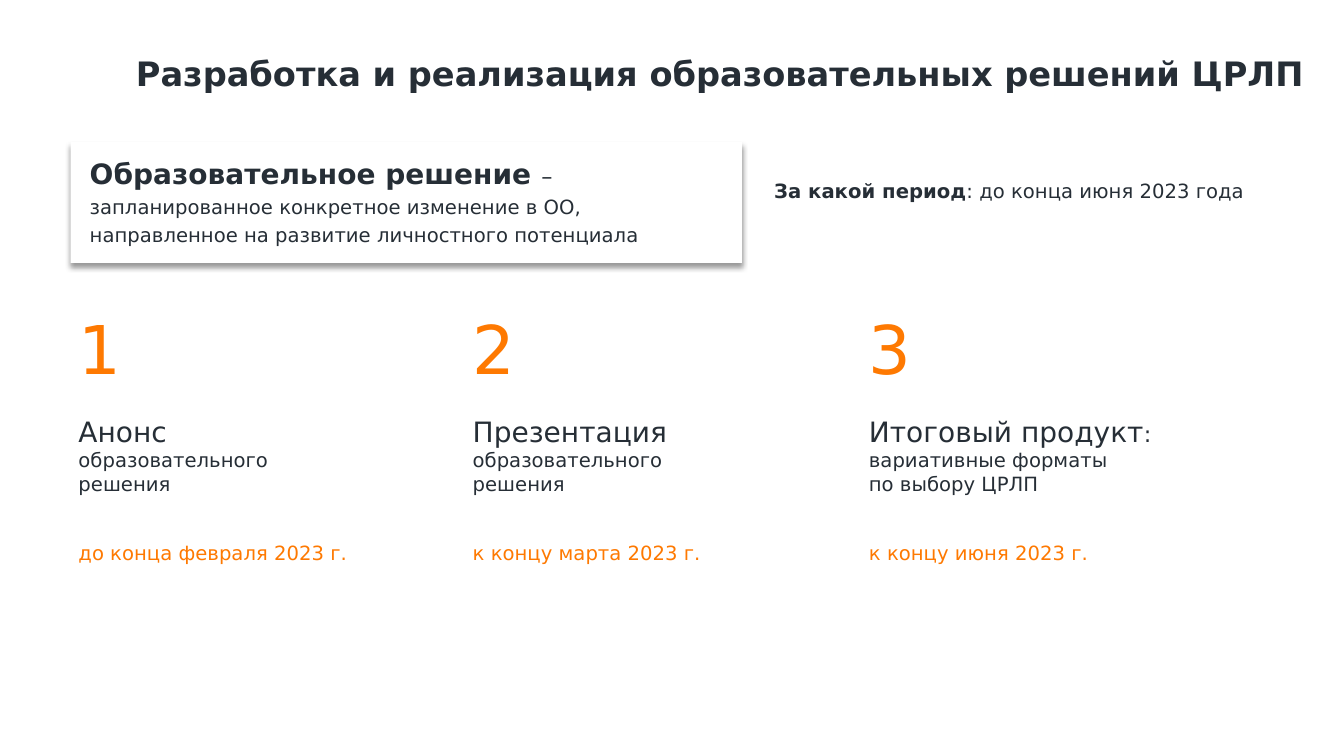
from lxml import etree
from pptx import Presentation
from pptx.dml.color import RGBColor
from pptx.enum.shapes import MSO_SHAPE
from pptx.enum.text import MSO_ANCHOR, MSO_AUTO_SIZE, PP_ALIGN
from pptx.oxml.ns import qn
from pptx.util import Inches, Pt

RECT, LEFT = MSO_SHAPE.RECTANGLE, PP_ALIGN.LEFT
MIDDLE, TOP = MSO_ANCHOR.MIDDLE, MSO_ANCHOR.TOP
GROW, FIXED = MSO_AUTO_SIZE.SHAPE_TO_FIT_TEXT, MSO_AUTO_SIZE.NONE
THEME = {
    "font": "DejaVu Sans",
    "ink": RGBColor(0x26, 0x2E, 0x36),
    "accent": RGBColor(0xFE, 0x79, 0x01),
    "white": RGBColor(0xFF, 0xFF, 0xFF),
    "digit": Pt(48),
    "title": Pt(24),
    "head": Pt(20),
    "mark": Pt(16),
    "body": Pt(14),
}

prs = Presentation()
prs.slide_width, prs.slide_height = Inches(13.33), Inches(7.5)
slide = prs.slides.add_slide(prs.slide_layouts[6])


def add_runs(para, text, size, bold, color):
    """Add a run per line, with breaks of the same type size between."""
    for i, line in enumerate(text.split("\n")):
        if i:
            para.add_line_break()
            last = para._p.findall(qn("a:br"))[-1]
            etree.SubElement(last, qn("a:rPr"), sz=str(int(THEME[size].pt * 100)))
        if line:
            run = para.add_run()
            run.text = line
            style = {"name": THEME["font"], "size": THEME[size], "bold": bold}
            for key, value in style.items():
                setattr(run.font, key, value)
            run.font.color.rgb = THEME[color]


def add_text(area, paras, color="ink", anchor=TOP, fit=GROW, space=1.0, panel=False):
    """Each paragraph is a list of (text, size name, bold) runs."""
    place = [Inches(value) for value in area]
    if panel:
        box = slide.shapes.add_shape(RECT, *place)
        box.shadow.inherit = False
        box.fill.solid()
        box.fill.fore_color.rgb = THEME["white"]
        box.line.fill.background()
    else:
        box = slide.shapes.add_textbox(*place)
    frame = box.text_frame
    format = {"word_wrap": True, "auto_size": fit, "vertical_anchor": anchor}
    for key, value in format.items():
        setattr(frame, key, value)
    for i, runs in enumerate(paras):
        para = frame.paragraphs[0] if i == 0 else frame.add_paragraph()
        para.alignment, para.line_spacing = LEFT, space
        for text, size, bold in runs:
            add_runs(para, text, size, bold, color)
    return box


# Definition card with a soft shadow below
card = add_text((0.7, 1.41, 6.66, 1.2), [
    [("Образовательное решение ", "head", True), ("–", "mark", False)],
    [("запланированное конкретное изменение в ОО, "
      "направленное на развитие личностного потенциала", "body", False)],
], fit=FIXED, space=1.2)
card.fill.solid()
card.fill.fore_color.rgb = THEME["white"]
card.text_frame.margin_left = Inches(0.19)
card.text_frame.margin_top = card.text_frame.margin_bottom = Inches(0.08)
effects = etree.SubElement(card.element.spPr, qn("a:effectLst"))
shadow = etree.SubElement(effects, qn("a:outerShdw"), blurRad="50800",
                          dist="38100", dir="5400000", algn="t", rotWithShape="0")
black = etree.SubElement(shadow, qn("a:srgbClr"), val="000000")
etree.SubElement(black, qn("a:alpha"), val="40000")

# Title
add_text((1.25, 0.4, 11.81, 0.59),
         [[("Разработка и реализация образовательных решений ЦРЛП", "title", True)]],
         space=1.2)

# Period
add_text((7.58, 1.73, 5.09, 0.34),
         [[("За какой период", "body", True),
           (": до конца июня 2023 года", "body", False)]])

# Three steps: number, result, deadline
task = [(" \n", "mark", False), ("образовательного \nрешения", "body", False)]
product = [
    [("Итоговый продукт", "head", False), (": ", "mark", False),
     ("вариативные форматы", "body", False)],
    [("по выбору ЦРЛП", "body", False)],
]
steps = [
    (0.68, 3.39, [[("Анонс", "head", False)] + task], True,
     3.21, "до конца февраля 2023 г."),
    (4.59, 3.5, [[("Презентация", "head", False)] + task], True,
     2.75, "к концу марта 2023 г."),
    (8.52, 4.37, product, False, 2.75, "к концу июня 2023 г."),
]
for num, (left, width, result, panel, span, date) in enumerate(steps, 1):
    add_text((left, 3, 0.52, 0.91), [[(str(num), "digit", False)]], "accent")
    add_text((left, 4.06, width, 0.91), result, anchor=MIDDLE, panel=panel)
    add_text((left, 5.32, span, 0.34), [[(date, "body", False)]], "accent")

prs.save("out.pptx")
